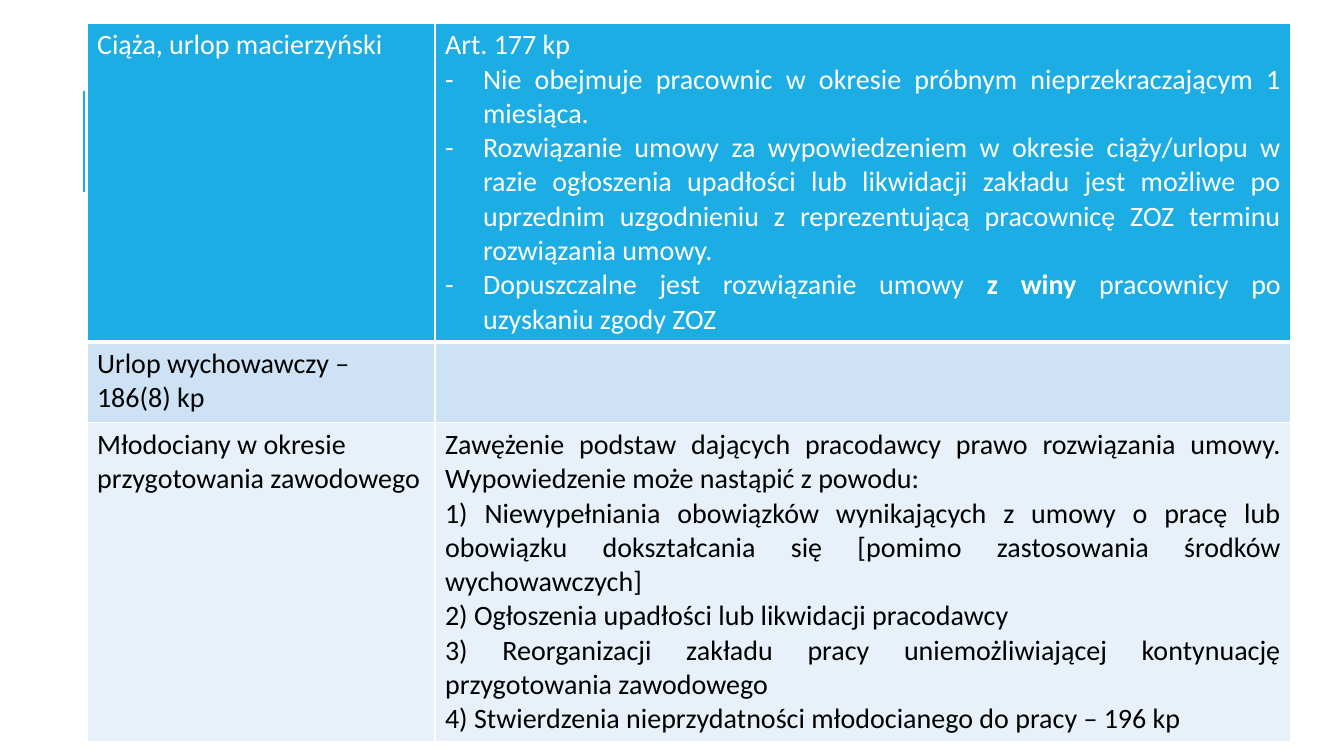
import dataclasses

import pptx
import pptx.dml.color
import pptx.enum.shapes
import pptx.enum.text
import pptx.oxml
import pptx.oxml.ns
import pptx.util

EMU_PER_PX = 914400 / 100.8
ALIGN = pptx.enum.text.PP_ALIGN


@dataclasses.dataclass(frozen=True)
class Theme:
    font: str = "Calibri"
    body_size: int = 20
    accent: str = "1CADE4"
    band_dark: str = "CDE3F5"
    band_light: str = "E8F1FA"
    light: str = "FFFFFF"
    dark: str = "000000"
    rule: float = 1.5
    border: int = 1
    header_border: int = 3


def px(length):
    return pptx.util.Emu(round(length * EMU_PER_PX))


def rgb(code):
    return pptx.dml.color.RGBColor.from_string(code)


def element(tag, **attributes):
    made = pptx.oxml.parse_xml(f"<{tag} {pptx.oxml.ns.nsdecls('a')}/>")
    for name, value in attributes.items():
        made.set(name, str(value))
    return made


class SlideBuilder:
    def __init__(self, deck, theme):
        self.theme = theme
        self.slide = deck.slides.add_slide(deck.slide_layouts[6])

    def line(self, x1, y1, x2, y2):
        rule = self.slide.shapes.add_connector(
            pptx.enum.shapes.MSO_CONNECTOR.STRAIGHT, px(x1), px(y1), px(x2), px(y2))
        rule.line.color.rgb = rgb(self.theme.accent)
        rule.line.width = pptx.util.Pt(self.theme.rule)
        rule._element.spPr.append(element("a:effectLst"))

    def table(self, left, top, widths, heights, rows, styles):
        grid = self.slide.shapes.add_table(
            len(rows), len(widths), px(left), px(top), px(sum(widths)), px(sum(heights))).table
        grid.horz_banding = False
        for column, width in zip(grid.columns, widths):
            column.width = px(width)
        for row, height in zip(grid.rows, heights):
            row.height = px(height)
        for r, (contents, (fill, color)) in enumerate(zip(rows, styles)):
            for c, paragraphs in enumerate(contents):
                cell = grid.cell(r, c)
                cell.fill.solid()
                cell.fill.fore_color.rgb = rgb(fill)
                self.borders(cell, r)
                align = ALIGN.JUSTIFY if c else ALIGN.LEFT
                self.text(cell.text_frame, paragraphs, color, align)

    def borders(self, cell, row):
        # The rule under the header row is thicker than the rest
        thin, thick = self.theme.border, self.theme.header_border
        widths = {"L": thin, "R": thin,
                  "T": thick if row == 1 else thin,
                  "B": thick if row == 0 else thin}
        properties = cell._tc.get_or_add_tcPr()
        for place, (side, width) in enumerate(widths.items()):
            edge = element(f"a:ln{side}", w=pptx.util.Pt(width))
            paint = element("a:solidFill")
            paint.append(element("a:srgbClr", val=self.theme.light))
            edge.append(paint)
            properties.insert(place, edge)

    def text(self, frame, paragraphs, color, align):
        for index, content in enumerate(paragraphs):
            paragraph = frame.add_paragraph() if index else frame.paragraphs[0]
            paragraph.alignment = align
            if content.startswith("- "):
                content = content[2:]
                self.dash(paragraph)
            # Text between asterisks is bold
            for part, words in enumerate(content.split("*")):
                run = paragraph.add_run()
                run.text = words
                run.font.color.rgb = rgb(color)
                formats = {"name": self.theme.font,
                           "size": pptx.util.Pt(self.theme.body_size),
                           "bold": part % 2 == 1}
                for name, value in formats.items():
                    setattr(run.font, name, value)

    def dash(self, paragraph):
        properties = paragraph._p.get_or_add_pPr()
        indent = px(38)
        properties.set("marL", str(indent))
        properties.set("indent", str(-indent))
        properties.append(element("a:buFont", typeface=self.theme.font))
        properties.append(element("a:buChar", char="-"))


PROTECTIONS = [
    [["Ciąża, urlop macierzyński"],
     ["Art. 177 kp",
      "- Nie obejmuje pracownic w okresie próbnym nieprzekraczającym 1 miesiąca.",
      "- Rozwiązanie umowy za wypowiedzeniem w okresie ciąży/urlopu w razie ogłoszenia "
      "upadłości lub likwidacji zakładu jest możliwe po uprzednim uzgodnieniu "
      "z reprezentującą pracownicę ZOZ terminu rozwiązania umowy.",
      "- Dopuszczalne jest rozwiązanie umowy *z winy* pracownicy po uzyskaniu zgody ZOZ"]],
    [["Urlop wychowawczy – 186(8) kp"], []],
    [["Młodociany w okresie przygotowania zawodowego"],
     ["Zawężenie podstaw dających pracodawcy prawo rozwiązania umowy. "
      "Wypowiedzenie może nastąpić z powodu:",
      "1) Niewypełniania obowiązków wynikających z umowy o pracę lub obowiązku "
      "dokształcania się [pomimo zastosowania środków wychowawczych]",
      "2) Ogłoszenia upadłości lub likwidacji pracodawcy",
      "3) Reorganizacji zakładu pracy uniemożliwiającej kontynuację "
      "przygotowania zawodowego",
      "4) Stwierdzenia nieprzydatności młodocianego do pracy – 196 kp"]],
]


def main():
    deck = pptx.Presentation()
    deck.slide_width, deck.slide_height = px(1344), px(756)
    theme = Theme()
    builder = SlideBuilder(deck, theme)

    # Accent rule at the left edge
    builder.line(84, 192, 84, 91)

    # Table of protected employees
    row_styles = [(theme.accent, theme.light),
                  (theme.band_dark, theme.dark),
                  (theme.band_light, theme.dark)]
    builder.table(87, 23, [348, 856], [305, 81, 305], PROTECTIONS, row_styles)

    deck.save("out.pptx")


if __name__ == "__main__":
    main()
